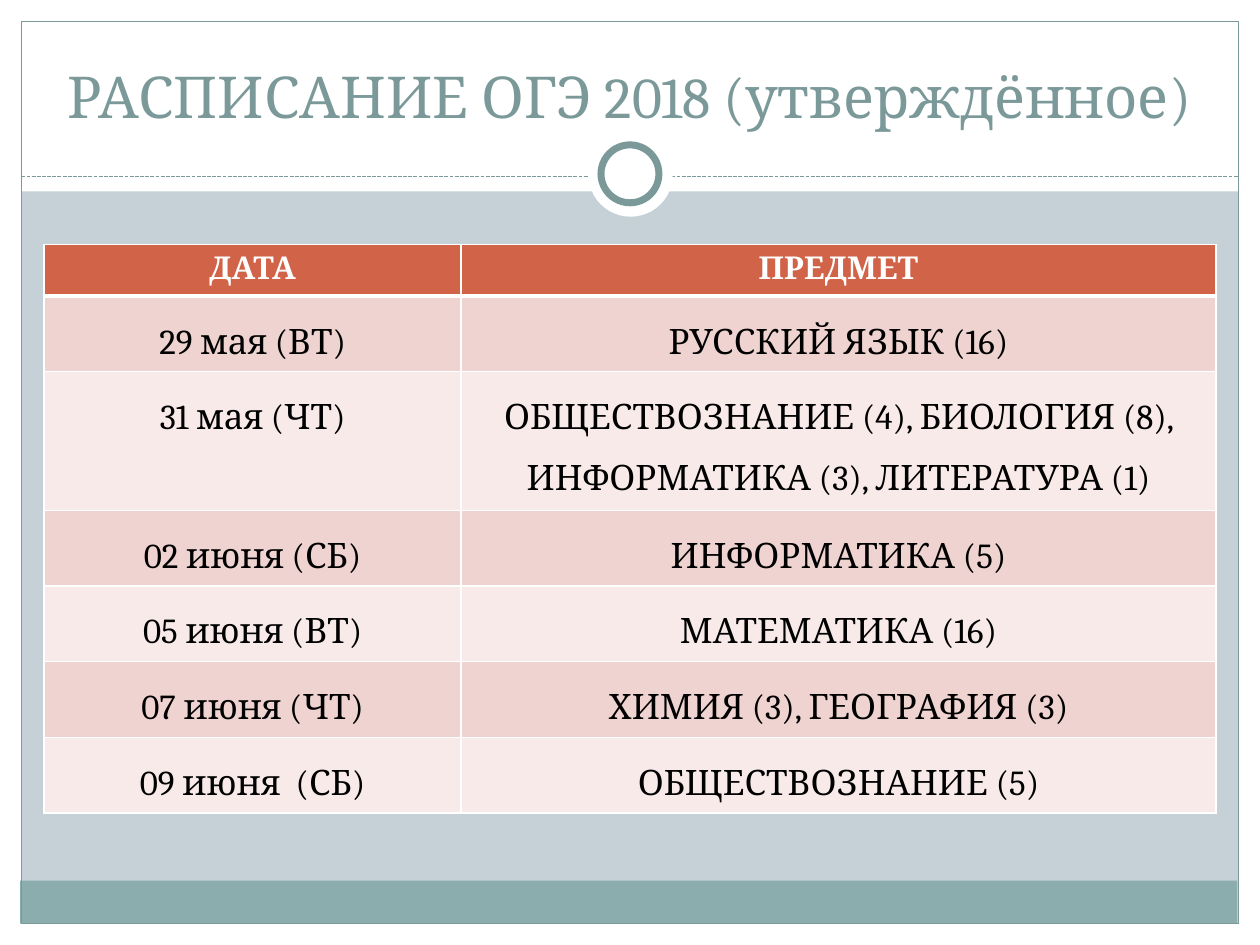
from typing import NamedTuple, Optional

from lxml.etree import SubElement
from pptx import Presentation
from pptx.dml.color import RGBColor
from pptx.enum.dml import MSO_LINE_DASH_STYLE as Dash
from pptx.enum.shapes import MSO_CONNECTOR_TYPE as Connector
from pptx.enum.shapes import MSO_AUTO_SHAPE_TYPE as Preset
from pptx.enum.text import MSO_VERTICAL_ANCHOR as Anchor
from pptx.enum.text import PP_PARAGRAPH_ALIGNMENT as Align
from pptx.oxml.ns import qn
from pptx.util import Emu, Pt

PX = 9144  # 100 px to the inch
WIDTH, HEIGHT = 1000, 750
FONT = "Cambria"
WHITE, TEAL, BLACK = "FFFFFF", "7C999A", "000000"
BACKGROUND, FOOTER = "C5D1D7", "8CADAE"
HEADER_FILL, BAND_FILLS = "D16349", ("F7EAE9", "EED3D0")


class Panel(NamedTuple):
    preset: Preset
    left: int
    top: int
    width: int
    height: int
    fill: Optional[str] = WHITE
    line: Optional[str] = None
    weight: float = 0.75


class Exam(NamedTuple):
    date: str
    subjects: str


PANELS_BELOW_RULE = [
    Panel(Preset.RECTANGLE, 0, 733, WIDTH, 17),
    Panel(Preset.RECTANGLE, 0, 0, WIDTH, 152),
    Panel(Preset.RECTANGLE, 0, 0, 17, HEIGHT),
    Panel(Preset.RECTANGLE, 983, 0, 17, HEIGHT),
    Panel(Preset.RECTANGLE, 16, 699, 966, 34, FOOTER),
    Panel(Preset.RECTANGLE, 17, 17, 966, 716, None, TEAL),
]
RINGS = [
    Panel(Preset.OVAL, 467, 105, 67, 67),
    Panel(Preset.OVAL, 477, 115, 46, 46, WHITE, TEAL, 4),
]
SCHEDULE = [
    Exam("ДАТА", "ПРЕДМЕТ"),
    Exam("29 мая (ВТ)", "РУССКИЙ ЯЗЫК (16)"),
    Exam("31 мая (ЧТ)", "ОБЩЕСТВОЗНАНИЕ (4), БИОЛОГИЯ (8), ИНФОРМАТИКА (3), ЛИТЕРАТУРА (1)"),
    Exam("02 июня (СБ)", "ИНФОРМАТИКА (5)"),
    Exam("05 июня (ВТ)", "МАТЕМАТИКА (16)"),
    Exam("07 июня (ЧТ)", "ХИМИЯ (3), ГЕОГРАФИЯ (3)"),
    Exam("09 июня  (СБ)", "ОБЩЕСТВОЗНАНИЕ (5)"),
]
COLUMN_WIDTHS = (331, 599)
ROW_HEIGHT = 41


def px(*lengths: int) -> list[Emu]:
    return [Emu(length * PX) for length in lengths]


def color(value: str) -> RGBColor:
    return RGBColor.from_string(value)


def paint(fill, value: str) -> None:
    fill.solid()
    fill.fore_color.rgb = color(value)


def write(frame, text: str, ink: str, size: int, bold: bool = False, spacing: float = 1.0) -> None:
    paragraph = frame.paragraphs[0]
    paragraph.text = text
    paragraph.alignment = Align.CENTER
    paragraph.line_spacing = spacing
    font = paragraph.runs[0].font
    for name, value in {"name": FONT, "size": Pt(size), "bold": bold}.items():
        setattr(font, name, value)
    font.color.rgb = color(ink)


def draw_panel(slide, panel: Panel) -> None:
    shape = slide.shapes.add_shape(panel.preset, *px(*panel[1:5]))
    shape.shadow.inherit = False
    if panel.fill:
        paint(shape.fill, panel.fill)
    else:
        shape.fill.background()
    if panel.line:
        paint(shape.line.fill, panel.line)
        shape.line.width = Pt(panel.weight)
    else:
        shape.line.fill.background()


def draw_rule(slide) -> None:
    rule = slide.shapes.add_connector(Connector.STRAIGHT, *px(17, 140, 983, 140))
    paint(rule.line.fill, TEAL)
    rule.line.width = Pt(0.75)
    rule.line.dash_style = Dash.SQUARE_DOT
    properties = rule.line._get_or_add_ln().getparent()
    SubElement(properties, qn("a:effectLst"))


def draw_title(slide, text: str) -> None:
    frame = slide.shapes.add_textbox(*px(33, 25, 933, 83)).text_frame
    for name, value in {"word_wrap": True, "vertical_anchor": Anchor.BOTTOM}.items():
        setattr(frame, name, value)
    write(frame, text, TEAL, 33)


def add_borders(cell, row: int) -> None:
    # The rule between the header and the first exam is thicker
    weights = {"L": 1, "R": 1, "T": 3 if row == 1 else 1, "B": 3 if row == 0 else 1}
    properties = cell._tc.get_or_add_tcPr()
    for side, weight in weights.items():
        border = SubElement(properties, qn(f"a:ln{side}"), w=str(Pt(weight)))
        fill = SubElement(border, qn("a:solidFill"))
        SubElement(fill, qn("a:srgbClr"), val=WHITE)


def draw_schedule(slide, exams: list[Exam]) -> None:
    frame = slide.shapes.add_table(
        len(exams), len(COLUMN_WIDTHS), *px(35, 194, sum(COLUMN_WIDTHS), 444))
    table = frame.table
    for column, width in zip(table.columns, px(*COLUMN_WIDTHS)):
        column.width = width
    for row, exam in enumerate(exams):
        table.rows[row].height = Emu(ROW_HEIGHT * PX)
        for column, text in enumerate(exam):
            cell = table.cell(row, column)
            add_borders(cell, row)
            if row == 0:
                paint(cell.fill, HEADER_FILL)
                write(cell.text_frame, text, WHITE, 18, bold=True)
            else:
                paint(cell.fill, BAND_FILLS[row % 2])
                write(cell.text_frame, text, BLACK, 20, spacing=1.5)
    frame.height = Emu(444 * PX)


def main() -> None:
    presentation = Presentation()
    presentation.slide_width, presentation.slide_height = px(WIDTH, HEIGHT)
    slide = presentation.slides.add_slide(presentation.slide_layouts[6])
    paint(slide.background.fill, BACKGROUND)

    # Frame, dashed rule and ring
    for panel in PANELS_BELOW_RULE:
        draw_panel(slide, panel)
    draw_rule(slide)
    for ring in RINGS:
        draw_panel(slide, ring)

    # Content
    draw_title(slide, "РАСПИСАНИЕ ОГЭ 2018 (утверждённое)")
    draw_schedule(slide, SCHEDULE)
    presentation.save("out.pptx")


if __name__ == "__main__":
    main()
